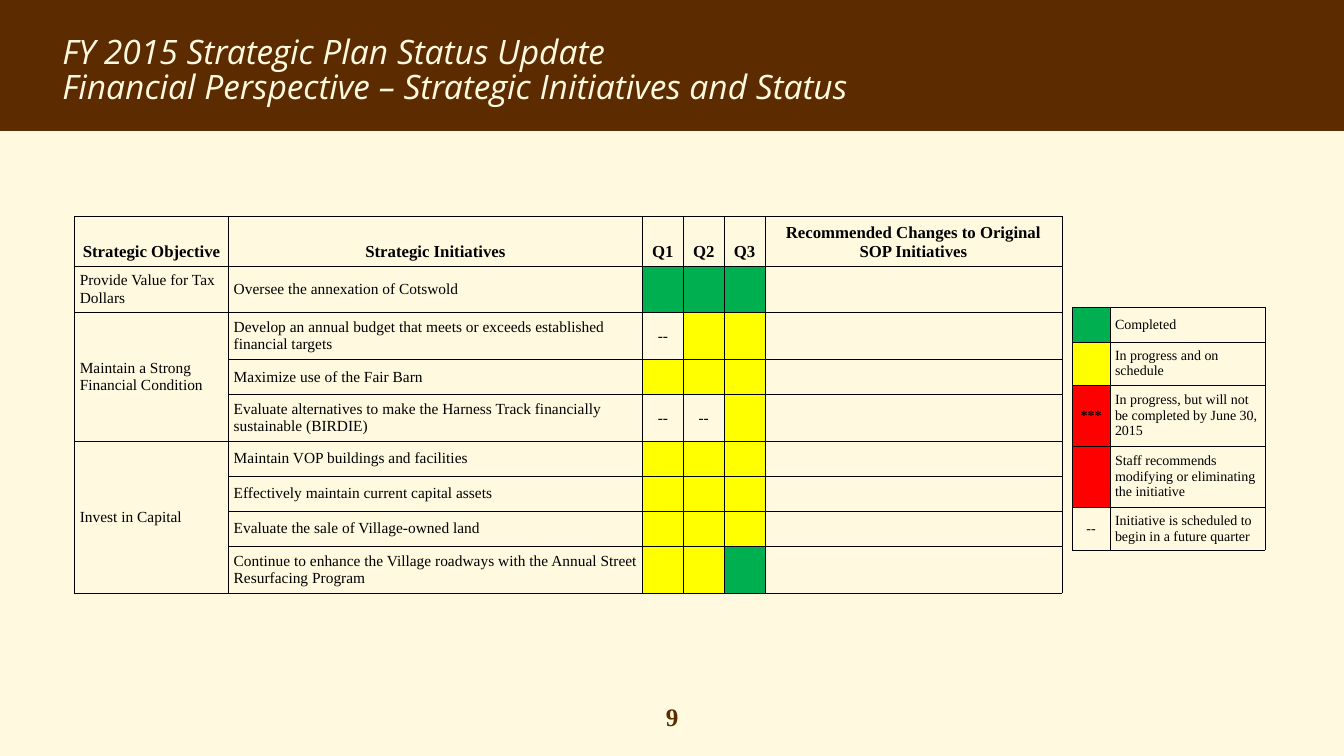
from lxml import etree
from pptx import Presentation
from pptx import util as u
from pptx.dml.color import RGBColor
from pptx.enum import shapes, text
from pptx.oxml import ns

COLORS = {
    "brown": "5D2B00",
    "cream": "FFF9DF",
    "black": "000000",
    "green": "00B050",
    "yellow": "FFFF00",
    "red": "FF0000",
}
SERIF = "Times New Roman"
CENTER = text.PP_ALIGN.CENTER
LEFT = text.PP_ALIGN.LEFT
MIDDLE = text.MSO_ANCHOR.MIDDLE
BOTTOM = text.MSO_ANCHOR.BOTTOM
STATUS = {"G": "green", "Y": "yellow", "R": "red"}

HEADERS = ["Strategic Objective", "Strategic Initiatives", "Q1", "Q2", "Q3",
           "Recommended Changes to Original SOP Initiatives"]
OBJECTIVES = [
    ("Provide Value for Tax Dollars", [
        ("Oversee the annexation of Cotswold", "GGG", 1.18),
    ]),
    ("Maintain a Strong Financial Condition", [
        ("Develop an annual budget that meets or exceeds established financial targets", "-YY", 1.18),
        ("Maximize use of the Fair Barn", "YYY", 0.88),
        ("Evaluate alternatives to make the Harness Track financially sustainable (BIRDIE)", "--Y", 1.18),
    ]),
    ("Invest in Capital", [
        ("Maintain VOP buildings and facilities", "YYY", 0.88),
        ("Effectively maintain current capital assets", "YYY", 0.88),
        ("Evaluate the sale of Village-owned land", "YYY", 0.88),
        ("Continue to enhance the Village roadways with the Annual Street Resurfacing Program", "YYG", 1.18),
    ]),
]
LEGEND = [
    ("G", "", "Completed", 0.88),
    ("Y", "", "In progress and on schedule", 1.08),
    ("R", "***", "In progress, but will not be completed by June 30, 2015", 1.54),
    ("R", "", "Staff recommends modifying or eliminating the initiative", 1.54),
    ("-", "--", "Initiative is scheduled to begin in a future quarter", 1.08),
]


def rgb(name):
    return RGBColor.from_string(COLORS[name])


def write(frame, content, size=11, font=SERIF, color="black", bold=False,
          italic=False, align=LEFT, spacing=None):
    for index, line in enumerate(content.split("\n")):
        paragraph = frame.paragraphs[0] if index == 0 else frame.add_paragraph()
        paragraph.alignment = align
        if spacing:
            paragraph.line_spacing = spacing
        if not line:
            paragraph._p.get_or_add_endParaRPr().set("sz", str(size * 100))
            continue
        run = paragraph.add_run()
        run.text = line
        run.font.size = u.Pt(size)
        run.font.name = font
        run.font.bold = bold
        run.font.italic = italic
        run.font.color.rgb = rgb(color)


def add_borders(cell):
    properties = cell._tc.get_or_add_tcPr()
    for side in ("lnL", "lnR", "lnT", "lnB"):
        line = etree.SubElement(properties, ns.qn("a:" + side), w=str(u.Pt(0.5)))
        fill = etree.SubElement(line, ns.qn("a:solidFill"))
        etree.SubElement(fill, ns.qn("a:srgbClr"), val=COLORS["black"])


def fill_cell(cell, content="", fill=None, anchor=MIDDLE, **style):
    cell.margin_left = cell.margin_right = u.Cm(0.13)
    cell.margin_top = cell.margin_bottom = u.Cm(0.13)
    cell.vertical_anchor = anchor
    add_borders(cell)
    if fill:
        cell.fill.solid()
        cell.fill.fore_color.rgb = rgb(fill)
    else:
        cell.fill.background()
    write(cell.text_frame, content, **style)


def add_grid(slide, left, top, widths, heights):
    frame = slide.shapes.add_table(
        len(heights), len(widths), u.Cm(left), u.Cm(top),
        u.Cm(sum(widths)), u.Cm(sum(heights)))
    table = frame.table
    table.first_row = table.horz_banding = False
    for column, width in zip(table.columns, widths):
        column.width = u.Cm(width)
    for row, height in zip(table.rows, heights):
        row.height = u.Cm(height)
    return table


def add_banner(slide, width):
    banner = slide.shapes.add_shape(
        shapes.MSO_SHAPE.RECTANGLE, 0, 0, width, u.Cm(3.3))
    banner.shadow.inherit = False
    banner.fill.solid()
    banner.fill.fore_color.rgb = rgb("brown")
    banner.line.fill.background()
    slide.shapes._spTree.insert(2, banner._element)


def set_title(slide, content):
    title = slide.shapes.title
    title.left, title.top = u.Cm(1.32), u.Cm(0.64)
    title.width, title.height = u.Cm(31.22), u.Cm(2.31)
    title.text_frame.auto_size = text.MSO_AUTO_SIZE.NONE
    title.text_frame.vertical_anchor = MIDDLE
    write(title.text_frame, content, size=24, font="Open Sans",
          color="cream", italic=True, spacing=0.88)


def add_page_number(slide, number):
    box = slide.shapes.add_textbox(u.Cm(15.67), u.Cm(17.55), u.Cm(2.54), u.Cm(1.02))
    box.text_frame.word_wrap = True
    write(box.text_frame, number, size=18, color="brown", bold=True, align=CENTER)


def add_initiatives(slide):
    heights = [1.26] + [item[2] for _, items in OBJECTIVES for item in items]
    table = add_grid(slide, 1.88, 5.44, [3.88, 10.43, 1.03, 1.03, 1.03, 7.48], heights)
    for column, header in enumerate(HEADERS):
        fill_cell(table.cell(0, column), header, anchor=BOTTOM,
                  size=12, bold=True, align=CENTER)
    row = 1
    for objective, items in OBJECTIVES:
        first = row
        for initiative, quarters, _ in items:
            fill_cell(table.cell(row, 0), objective if row == first else "")
            fill_cell(table.cell(row, 1), initiative)
            for column, status in enumerate(quarters, 2):
                fill_cell(table.cell(row, column), "--" if status == "-" else "",
                          fill=STATUS.get(status), align=CENTER)
            fill_cell(table.cell(row, 5))
            row += 1
        if len(items) > 1:
            table.cell(first, 0).merge(table.cell(row - 1, 0))


def add_legend(slide):
    table = add_grid(slide, 27.02, 7.74, [0.95, 3.91], [entry[3] for entry in LEGEND])
    for row, (status, mark, meaning, _) in enumerate(LEGEND):
        fill_cell(table.cell(row, 0), mark, fill=STATUS.get(status),
                  size=10, bold=mark == "***", align=CENTER)
        fill_cell(table.cell(row, 1), meaning, size=10)


def main():
    presentation = Presentation()
    presentation.slide_width = u.Cm(33.87)
    presentation.slide_height = u.Cm(19.05)
    slide = presentation.slides.add_slide(presentation.slide_layouts[5])
    slide.background.fill.solid()
    slide.background.fill.fore_color.rgb = rgb("cream")
    add_banner(slide, presentation.slide_width)
    set_title(slide, "FY 2015 Strategic Plan Status Update\n"
                     "Financial Perspective – Strategic Initiatives and Status")
    add_initiatives(slide)
    add_legend(slide)
    add_page_number(slide, "9")
    presentation.save("out.pptx")


if __name__ == "__main__":
    main()
